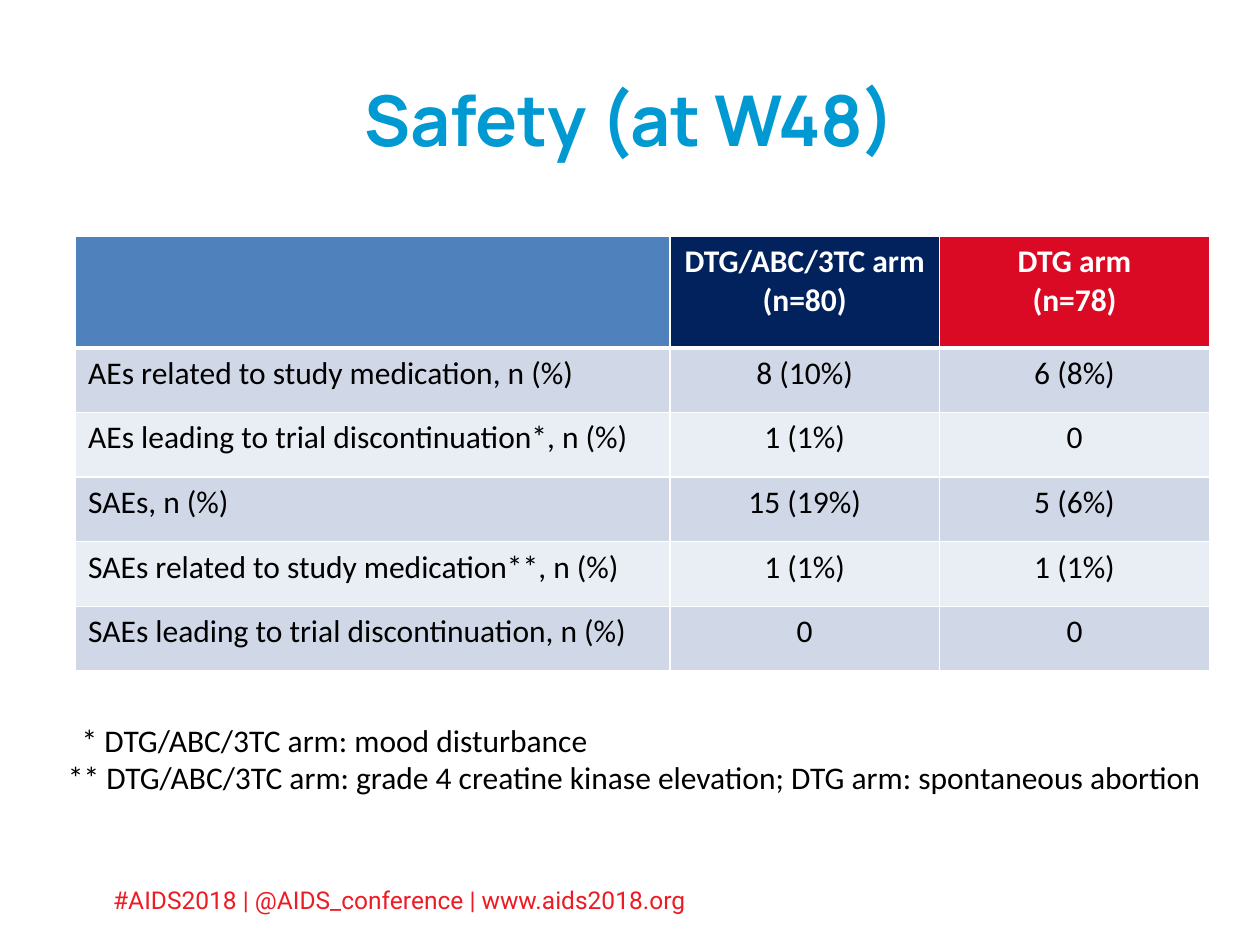
from dataclasses import dataclass

from lxml.etree import SubElement
from pptx import Presentation
from pptx.dml.color import RGBColor
from pptx.enum.text import MSO_ANCHOR, PP_ALIGN
from pptx.oxml.ns import qn
from pptx.util import Inches, Pt


@dataclass(frozen=True)
class Theme:
    """Colours, fonts and type sizes of the slide."""
    title: str = "0099D2"
    footer: str = "ED1C24"
    ink: str = "000000"
    paper: str = "FFFFFF"
    header_fills: tuple = ("4F81BD", "02225E", "DA0A24")
    band_fills: tuple = ("D0D8E8", "E9EDF4")
    title_font: str = "Manrope"
    body_font: str = "Calibri"
    footer_font: str = "Roboto"
    title_size: int = 40
    body_size: int = 18
    footer_size: int = 14
    rule: int = 1
    header_rule: int = 3


@dataclass(frozen=True)
class Box:
    """A region of the slide in inches."""
    left: float
    top: float
    width: float
    height: float

    def emu(self):
        """Return the region as slide lengths."""
        return [Inches(n) for n in (self.left, self.top, self.width, self.height)]


THEME = Theme()
SLIDE = Box(0, 0, 10, 7.5)
HEADINGS = (
    (),
    ("DTG/ABC/3TC arm", "(n=80)"),
    ("DTG arm", "(n=78)"),
)
EVENTS = (
    ("AEs related to study medication, n (%)", "8 (10%)", "6 (8%)"),
    ("AEs leading to trial discontinuation*, n (%)", "1 (1%)", "0"),
    ("SAEs, n (%)", "15 (19%)", "5 (6%)"),
    ("SAEs related to study medication**, n (%)", "1 (1%)", "1 (1%)"),
    ("SAEs leading to trial discontinuation, n (%)", "0", "0"),
)
FOOTNOTES = (
    "* DTG/ABC/3TC arm: mood disturbance",
    "** DTG/ABC/3TC arm: grade 4 creatine kinase elevation; DTG arm: spontaneous abortion",
)


def write_lines(frame, lines, font, size, color, bold=False, align=PP_ALIGN.LEFT):
    """Write each line as one paragraph with one run."""
    for index, line in enumerate(lines):
        paragraph = frame.paragraphs[0] if index == 0 else frame.add_paragraph()
        paragraph.alignment = align
        run = paragraph.add_run()
        run.text = line
        run.font.name = font
        run.font.size = Pt(size)
        run.font.bold = bold
        run.font.color.rgb = RGBColor.from_string(color)


def add_frame(slide, box, anchor=MSO_ANCHOR.TOP):
    """Add a wrapping text box and return its text frame."""
    frame = slide.shapes.add_textbox(*box.emu()).text_frame
    frame.word_wrap = True
    frame.vertical_anchor = anchor
    return frame


def style_cell(cell, fill, bottom, top):
    """Give a cell its white rules and its fill."""
    properties = cell._tc.get_or_add_tcPr()
    rules = {"a:lnL": THEME.rule, "a:lnR": THEME.rule, "a:lnT": top, "a:lnB": bottom}
    for side, weight in rules.items():
        line = SubElement(properties, qn(side), w=str(Pt(weight)))
        SubElement(SubElement(line, qn("a:solidFill")), qn("a:srgbClr"), val=THEME.paper)
    cell.fill.solid()
    cell.fill.fore_color.rgb = RGBColor.from_string(fill)


def add_title(slide, box):
    """Place the centred slide title."""
    frame = add_frame(slide, box, MSO_ANCHOR.MIDDLE)
    write_lines(frame, ["Safety (at W48)"], THEME.title_font, THEME.title_size,
                THEME.title, True, PP_ALIGN.CENTER)


def add_safety_table(slide, box):
    """Place the table of adverse events by trial arm."""
    table = slide.shapes.add_table(len(EVENTS) + 1, len(HEADINGS), *box.emu()).table
    arm_width = box.width * 0.238
    header_height = box.height * 0.257
    event_height = (box.height - header_height) / len(EVENTS)
    for index, column in enumerate(table.columns):
        column.width = Inches(arm_width if index else box.width - 2 * arm_width)
    for index, row in enumerate(table.rows):
        row.height = Inches(event_height if index else header_height)

    for index, (lines, fill) in enumerate(zip(HEADINGS, THEME.header_fills)):
        heading = table.cell(0, index)
        style_cell(heading, fill, THEME.header_rule, THEME.rule)
        write_lines(heading.text_frame, lines, THEME.body_font, THEME.body_size,
                    THEME.paper, True, PP_ALIGN.CENTER)

    for row, event in enumerate(EVENTS, 1):
        top = THEME.header_rule if row == 1 else THEME.rule
        for column, entry in enumerate(event):
            cell = table.cell(row, column)
            style_cell(cell, THEME.band_fills[(row - 1) % 2], THEME.rule, top)
            write_lines(cell.text_frame, [entry], THEME.body_font, THEME.body_size, THEME.ink,
                        align=PP_ALIGN.CENTER if column else PP_ALIGN.LEFT)


def add_footnotes(slide, box):
    """Place the footnotes, with the single star indented."""
    frame = add_frame(slide, box)
    write_lines(frame, FOOTNOTES, THEME.body_font, THEME.body_size, THEME.ink)
    frame.paragraphs[0]._p.get_or_add_pPr().set("marL", str(Inches(0.11)))


def add_footer(slide, box):
    """Place the conference line."""
    write_lines(add_frame(slide, box), ["#AIDS2018 | @AIDS_conference | www.aids2018.org"],
                THEME.footer_font, THEME.footer_size, THEME.footer)


def main():
    """Build the safety slide and save it."""
    deck = Presentation()
    deck.slide_width, deck.slide_height = Inches(SLIDE.width), Inches(SLIDE.height)
    slide = deck.slides.add_slide(deck.slide_layouts[6])
    width, height = SLIDE.width, SLIDE.height
    add_footer(slide, Box(width * 0.08, height * 0.93, width * 0.73, height * 0.05))
    add_title(slide, Box(width * 0.05, height * 0.04, width * 0.9, height * 0.17))
    add_safety_table(slide, Box(width * 0.06, height * 0.25, width * 0.9, height * 0.46))
    add_footnotes(slide, Box(width * 0.044, height * 0.756, width * 0.931, height * 0.095))
    deck.save("out.pptx")


if __name__ == "__main__":
    main()
